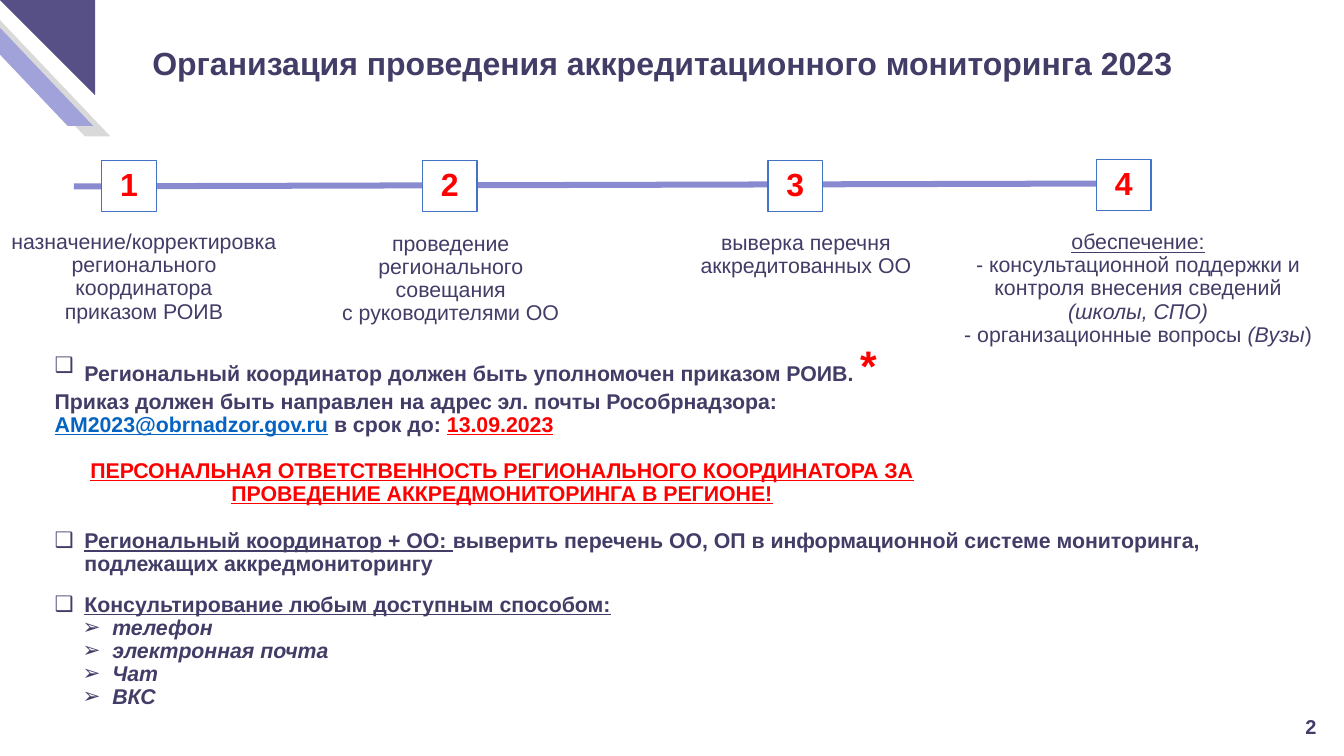
import collections

import pptx
import pptx.dml.color
import pptx.enum.shapes
import pptx.enum.text
import pptx.oxml.ns
import pptx.util
from lxml import etree

RGBColor = pptx.dml.color.RGBColor
INK = RGBColor(0x42, 0x3D, 0x67)
RED = RGBColor(0xFF, 0x00, 0x00)
ADDRESS_BLUE = RGBColor(0x05, 0x63, 0xC1)
BADGE_BLUE = RGBColor(0x44, 0x72, 0xC4)
WHITE = RGBColor(0xFF, 0xFF, 0xFF)
GREY = RGBColor(0xD9, 0xD9, 0xD9)
LILAC = RGBColor(0xA2, 0xA2, 0xDA)
VIOLET = RGBColor(0x56, 0x50, 0x87)
AXIS_LILAC = RGBColor(0x8A, 0x8A, 0xD0)

SLIDE_WIDTH, SLIDE_HEIGHT = pptx.util.Inches(14), pptx.util.Inches(7.87)
COLUMNS = 140
CELL = SLIDE_WIDTH // COLUMNS
SQUARE, ARROW = "❑", "➢"

SHAPE = pptx.enum.shapes.MSO_SHAPE
ANCHOR = pptx.enum.text.MSO_ANCHOR
ALIGN = pptx.enum.text.PP_ALIGN
qn = pptx.oxml.ns.qn

Run = collections.namedtuple("Run", "text underline italic color size", defaults=(None, None, None, None))
Line = collections.namedtuple("Line", "runs bullet indent align before", defaults=(None, 0, ALIGN.LEFT, 0))


class Box(collections.namedtuple("Box", "left top width height")):
    """Rectangle measured in grid cells."""

    def inner(self, left, top, width, height):
        """Return a box offset from this one's corner."""
        return Box(self.left + left, self.top + top, width, height)

    def lengths(self):
        """Return the box as slide lengths."""
        return [round(cells * CELL) for cells in self]


def place(shape, box):
    """Move a shape into a box."""
    shape.left, shape.top, shape.width, shape.height = box.lengths()


def add_figure(slide, kind, box, fill, flips=()):
    """Add a filled preset shape without outline or shadow."""
    figure = slide.shapes.add_shape(kind, *box.lengths())
    figure.shadow.inherit = False
    figure.fill.solid()
    figure.fill.fore_color.rgb = fill
    figure.line.fill.background()
    for flip in flips:
        figure.element.spPr.find(qn("a:xfrm")).set(flip, "1")
    return figure


def set_bullet(paragraph, bullet, indent):
    """Give a paragraph its bullet and hanging indent, or none."""
    properties = paragraph._p.get_or_add_pPr()
    hang = 3.1 if bullet else 0
    properties.set("marL", str(round(indent * CELL)))
    properties.set("indent", str(round(-hang * CELL)))
    if bullet:
        etree.SubElement(properties, qn("a:buChar")).set("char", bullet)
    else:
        etree.SubElement(properties, qn("a:buNone"))


def write(shape, lines, size=16, bold=False, color=INK, anchor=ANCHOR.TOP):
    """Fill a shape with formatted lines of text."""
    frame = shape.text_frame
    frame.word_wrap = True
    frame.auto_size = pptx.enum.text.MSO_AUTO_SIZE.NONE
    frame.vertical_anchor = anchor
    frame.margin_left = frame.margin_right = frame.margin_top = frame.margin_bottom = 0
    for index, line in enumerate(lines):
        paragraph = frame.add_paragraph() if index else frame.paragraphs[0]
        set_bullet(paragraph, line.bullet, line.indent)
        paragraph.alignment = line.align
        paragraph.line_spacing = 0.9
        paragraph.space_before = pptx.util.Pt(line.before)
        paragraph.space_after = pptx.util.Pt(0)
        font = paragraph.font
        font.name, font.size, font.bold = "Arial", pptx.util.Pt(size), bold
        font.color.rgb = color
        for piece in line.runs:
            for order, text in enumerate(piece.text.split("\n")):
                if order:
                    paragraph.add_line_break()
                if text:
                    run = paragraph.add_run()
                    run.text = text
                    run.font.underline, run.font.italic = piece.underline, piece.italic
                    if piece.color:
                        run.font.color.rgb = piece.color
                    if piece.size:
                        run.font.size = pptx.util.Pt(piece.size)


def centred(*runs, before=0):
    """Return a centred line of runs."""
    return Line(runs, align=ALIGN.CENTER, before=before)


def add_corner(slide, box):
    """Draw the corner ornament."""
    for left, top, fill in ((-3.6, 1.1, GREY), (-5.4, 0, LILAC)):
        band = add_figure(slide, SHAPE.PARALLELOGRAM, box.inner(left, top, 15.1, 13.1), fill, ["flipH"])
        band.adjustments[0] = 0.95
    add_figure(slide, SHAPE.RIGHT_TRIANGLE, box.inner(0, 0, 9.9, 9.9), VIOLET, ["flipH", "flipV"])


def add_heading(slide, box):
    """Set the slide title."""
    place(slide.shapes.title, box)
    heading = centred(Run("Организация проведения аккредитационного мониторинга 2023"))
    write(slide.shapes.title, [heading], 24, True, anchor=ANCHOR.MIDDLE)


def add_axis(slide, box):
    """Draw the arrow that runs through the steps."""
    left, top, width, height = box.lengths()
    axis = slide.shapes.add_connector(
        pptx.enum.shapes.MSO_CONNECTOR.STRAIGHT, left, top + height, left + width, top)
    axis.line.color.rgb = AXIS_LILAC
    axis.line.width = pptx.util.Pt(4.5)
    properties = axis.element.spPr
    etree.SubElement(properties.find(qn("a:ln")), qn("a:tailEnd")).set("type", "arrow")
    etree.SubElement(properties, qn("a:effectLst"))


def add_timeline(slide, box):
    """Draw the numbered steps with their captions."""
    steps = [
        (10.6, 0.1, (0.8, 7.5, 28.4, 11.8), [
            centred(Run("назначение/корректировка регионального координатора")),
            centred(Run("приказом РОИВ"))]),
        (44, 0.1, (35.5, 7.7, 22.9, 9.7), [
            centred(Run("проведение регионального совещания\nс руководителями ОО"))]),
        (80, 0.1, (71.7, 7.6, 24.5, 4.8), [
            centred(Run("выверка перечня аккредитованных ОО"))]),
        (114.2, 0, (99, 7.5, 39.1, 12.1), [
            centred(Run("обеспечение:", True)),
            centred(Run("- консультационной поддержки и контроля внесения сведений\n"),
                    Run("(школы, СПО)", italic=True)),
            centred(Run("- организационные вопросы "), Run("(Вузы", italic=True), Run(")"))]),
    ]
    add_axis(slide, box.inner(7.7, 2.5, 111.1, 0.3))
    for number, (left, top, caption_area, caption) in enumerate(steps, 1):
        badge = add_figure(slide, SHAPE.RECTANGLE, box.inner(left, top, 5.7, 5.3), WHITE)
        badge.line.color.rgb = BADGE_BLUE
        badge.line.width = pptx.util.Pt(1)
        write(badge, [centred(Run(str(number)))], 24, True, RED, ANCHOR.MIDDLE)
        write(slide.shapes.add_textbox(*box.inner(*caption_area).lengths()), caption)


def add_duties(slide, box):
    """Fill the body placeholders with the coordinator's duties."""
    order = [
        Line([Run("Региональный координатор должен быть уполномочен приказом РОИВ. "),
              Run("*", color=RED, size=32)], SQUARE, 3.1),
        Line([Run("Приказ должен быть направлен на адрес эл. почты Рособрнадзора: "),
              Run("AM2023@obrnadzor.gov.ru", True, color=ADDRESS_BLUE),
              Run(" в срок до: "), Run("13.09.2023", True, color=RED)]),
        centred(Run("ПЕРСОНАЛЬНАЯ ОТВЕТСТВЕННОСТЬ РЕГИОНАЛЬНОГО КООРДИНАТОРА ЗА "
                    "ПРОВЕДЕНИЕ АККРЕДМОНИТОРИНГА В РЕГИОНЕ!", True, color=RED), before=17),
    ]
    checking = [
        Line([Run("Региональный координатор + ОО: ", True),
              Run("выверить перечень ОО, ОП в информационной системе мониторинга, "
                  "подлежащих аккредмониторингу")], SQUARE, 3.1),
    ]
    advice = [Line([Run("Консультирование любым доступным способом:", True)], SQUARE, 3.1)]
    advice += [Line([Run(channel, italic=True)], ARROW, 6)
               for channel in ("телефон", "электронная почта", "Чат", "ВКС")]
    areas = [(0, 93.2, 19.4, order), (19.3, 122.8, 4.8, checking), (25.9, 97.3, 12.1, advice)]
    title, *bodies = slide.placeholders
    for body, (top, width, height, lines) in zip(bodies, areas):
        place(body, box.inner(0, top, width, height))
        write(body, lines, bold=True)
    for spare in bodies[len(areas):]:
        spare.element.getparent().remove(spare.element)


def add_page_number(slide, box):
    """Write the page number."""
    number = slide.shapes.add_textbox(*box.lengths())
    write(number, [centred(Run("2"))], 15, True, anchor=ANCHOR.MIDDLE)


def main():
    """Build and save the presentation."""
    deck = pptx.Presentation()
    deck.slide_width, deck.slide_height = SLIDE_WIDTH, SLIDE_HEIGHT
    slide = deck.slides.add_slide(deck.slide_layouts.get_by_name("Comparison"))
    add_corner(slide, Box(0, 0, 11.5, 14.2))
    add_heading(slide, Box(10.4, 4.4, 117.2, 4.7))
    add_timeline(slide, Box(0, 16.6, COLUMNS, 19.6))
    add_duties(slide, Box(5.7, 35.9, 122.8, 38))
    add_page_number(slide, Box(135.1, 74, 2.9, 3.6))
    deck.save("out.pptx")


if __name__ == "__main__":
    main()
